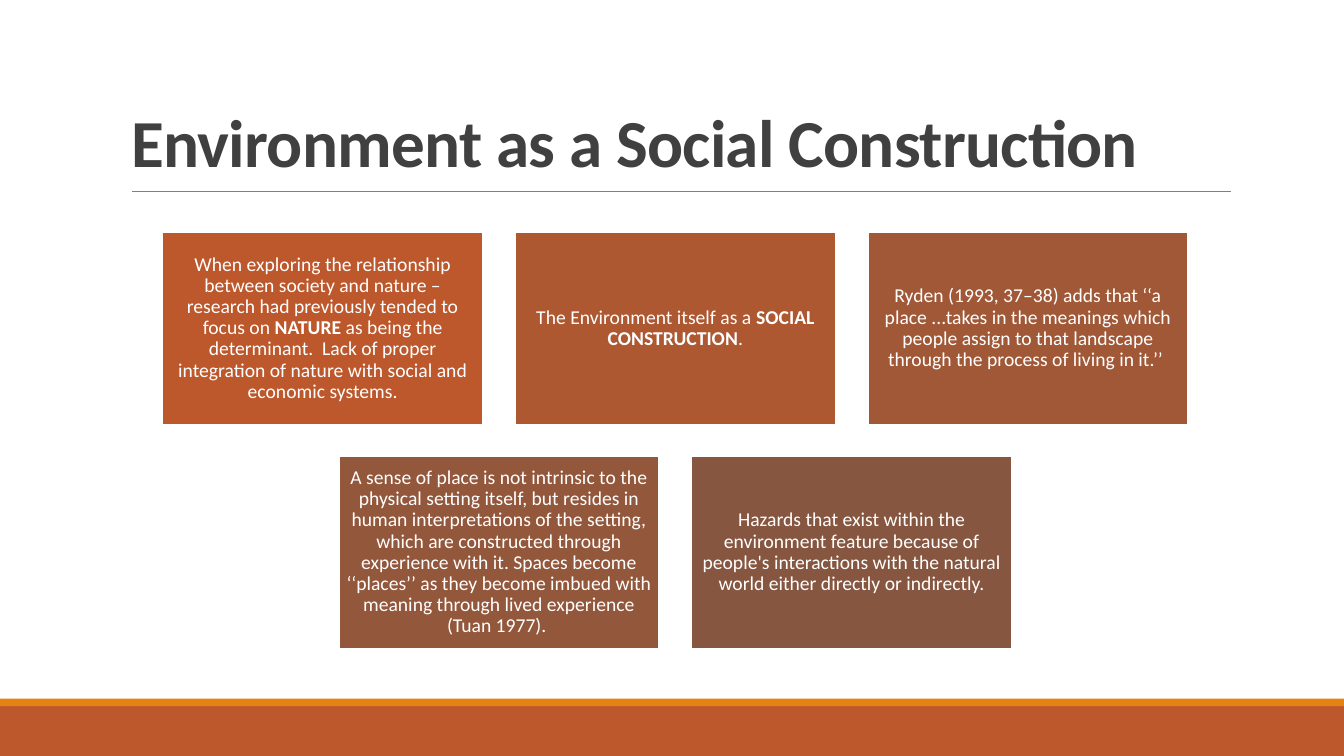
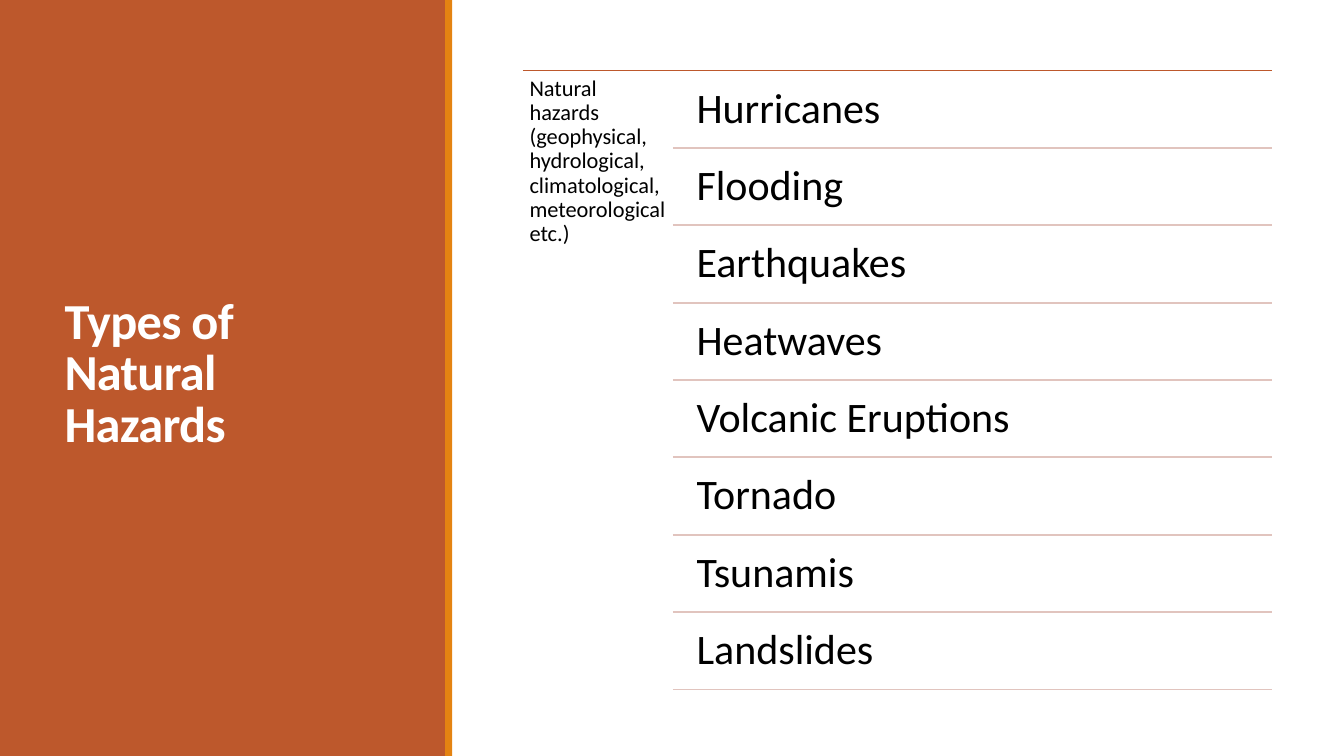
"""Build two slides on the environment as a construction and on natural hazards."""
import pptx
import pptx.dml.color
import pptx.enum.shapes
import pptx.enum.text
import pptx.util
import lxml.etree

Pt = pptx.util.Pt
ALIGN = pptx.enum.text.PP_ALIGN
ANCHOR = pptx.enum.text.MSO_ANCHOR
FONT = "Calibri"
WIDTH, HEIGHT = 960, 540
COLORS = {
    "rust": "BD582C",
    "orange": "E48312",
    "title": "404040",
    "rule": "808080",
    "row_rule": "E1C4BE",
    "white": "FFFFFF",
    "black": "000000",
}
CARD_FILLS = ["BD582C", "AE5832", "A05837", "93573C", "865640"]
CARDS = [
    [
        ("When exploring the relationship between society and nature – research had "
         "previously tended to focus on ", False),
        ("NATURE", True),
        (" as being the determinant.  Lack of proper integration of nature with "
         "social and economic systems.", False),
    ],
    [
        ("The Environment itself as a ", False),
        ("SOCIAL CONSTRUCTION", True),
        (".", False),
    ],
    [
        ("Ryden (1993, 37–38) adds that ‘‘a place ...takes in the meanings which people "
         "assign to that landscape through the process of living in it.’’ ", False),
    ],
    [
        ("A sense of place is not intrinsic to the physical setting itself, but resides in "
         "human interpretations of the setting, which are constructed through experience "
         "with it. Spaces become ‘‘places’’ as they become imbued with meaning through "
         "lived experience (Tuan 1977). ", False),
    ],
    [
        ("Hazards that exist within the environment feature because of people's "
         "interactions with the natural world either directly or indirectly.", False),
    ],
]
CATEGORY = ("Natural hazards (geophysical, hydrological, climatological, "
            "meteorological etc.)")
HAZARDS = ["Hurricanes", "Flooding", "Earthquakes", "Heatwaves",
           "Volcanic Eruptions", "Tornado", "Tsunamis", "Landslides"]


def rgb(value):
    """Return a colour object for a hex string."""
    return pptx.dml.color.RGBColor.from_string(value)


def set_text(box, spans, size, color, inset, anchor, align=ALIGN.LEFT, bold=None, spacing=0.9):
    """Fill a box with one paragraph of (text, bold) spans."""
    frame = box.text_frame
    frame.word_wrap = True
    frame.auto_size = pptx.enum.text.MSO_AUTO_SIZE.NONE
    frame.vertical_anchor = anchor
    frame.margin_left = frame.margin_right = Pt(inset)
    frame.margin_top = frame.margin_bottom = Pt(inset)
    para = frame.paragraphs[0]
    para.alignment = align
    para.line_spacing = spacing
    para.font.name = FONT
    para.font.size = Pt(size)
    para.font.bold = bold
    para.font.color.rgb = rgb(color)
    for text, strong in spans:
        span = para.add_run()
        span.text = text
        if strong:
            span.font.bold = True
    return para


def add_title(page, text, left, top, width, height, size, color, anchor):
    """Place the title placeholder in front and style it."""
    title = page.shapes.title
    page.shapes._spTree.append(title._element)
    title.left, title.top, title.width, title.height = map(Pt, (left, top, width, height))
    para = set_text(title, [(text, False)], size, color, 7.2, anchor, bold=True, spacing=0.85)
    para.runs[0]._r.get_or_add_rPr().set("spc", "-50")


def add_block(page, left, top, width, height, fill):
    """Add a plain filled rectangle."""
    block = page.shapes.add_shape(
        pptx.enum.shapes.MSO_SHAPE.RECTANGLE, Pt(left), Pt(top), Pt(width), Pt(height))
    block.shadow.inherit = False
    block.fill.solid()
    block.fill.fore_color.rgb = rgb(fill)
    block.line.fill.background()
    return block


def add_rule(page, left, right, top, color, weight):
    """Add a horizontal line without a shadow."""
    rule = page.shapes.add_connector(
        pptx.enum.shapes.MSO_CONNECTOR.STRAIGHT, Pt(left), Pt(top), Pt(right), Pt(top))
    rule.line.color.rgb = rgb(color)
    rule.line.width = Pt(weight)
    lxml.etree.SubElement(rule._element.spPr, pptx.oxml.ns.qn("a:effectLst"))


def add_label(page, text, left, top, width, height, size, inset):
    """Add a black text box anchored at its top."""
    box = page.shapes.add_textbox(Pt(left), Pt(top), Pt(width), Pt(height))
    set_text(box, [(text, False)], size, COLORS["black"], inset, ANCHOR.TOP)


def add_card(page, spans, left, top, width, height, fill):
    """Add a coloured card with centred white text."""
    card = add_block(page, left, top, width, height, fill)
    card.line.color.rgb = rgb(COLORS["white"])
    card.line.width = Pt(1.25)
    set_text(card, spans, 14, COLORS["white"], 4.2, ANCHOR.MIDDLE, ALIGN.CENTER)


def build_construction(page):
    """Build the slide with five cards in two centred rows."""
    add_block(page, 0, 504, WIDTH, 36, COLORS["rust"])
    add_block(page, 0, 499, WIDTH, 5.5, COLORS["orange"])
    add_rule(page, 94.3, 879, 136.8, COLORS["rule"], 0.5)
    add_title(page, "Environment as a Social Construction", 86.4, 22.5, 792, 114.2,
              48, COLORS["title"], ANCHOR.BOTTOM)
    columns, step, row_step = 3, 251.9, 160
    for index, (spans, fill) in enumerate(zip(CARDS, CARD_FILLS)):
        row, column = divmod(index, columns)
        in_row = min(columns, len(CARDS) - row * columns)
        left = 116 + (column + (columns - in_row) / 2) * step
        add_card(page, spans, left, 165.8 + row * row_step, 229, 137.4, fill)


def build_hazards(page):
    """Build the slide with a side panel and a ruled list."""
    add_block(page, 0, 0, 319, HEIGHT, COLORS["rust"])
    add_title(page, "Types of Natural Hazards", 38.9, 41, 242.6, 454.3,
              36, COLORS["white"], ANCHOR.MIDDLE)
    add_block(page, 318, 0, 5, HEIGHT, COLORS["orange"])
    right, row_step = 908.6, 55.25
    add_rule(page, 373.5, right, 50.3, COLORS["rust"], 1.25)
    add_label(page, CATEGORY, 373.5, 50.3, 107.2, 445, 16, 4.8)
    for index, hazard in enumerate(HAZARDS):
        offset = index * row_step
        add_label(page, hazard, 488.5, 53 + offset, 420, 52.6, 30, 9)
        add_rule(page, 480.6, right, 105.7 + offset, COLORS["row_rule"], 1.25)


def main():
    """Create the deck and save it."""
    deck = pptx.Presentation()
    deck.slide_width, deck.slide_height = Pt(WIDTH), Pt(HEIGHT)
    for build in (build_construction, build_hazards):
        build(deck.slides.add_slide(deck.slide_layouts[5]))
    deck.save("out.pptx")


if __name__ == "__main__":
    main()
